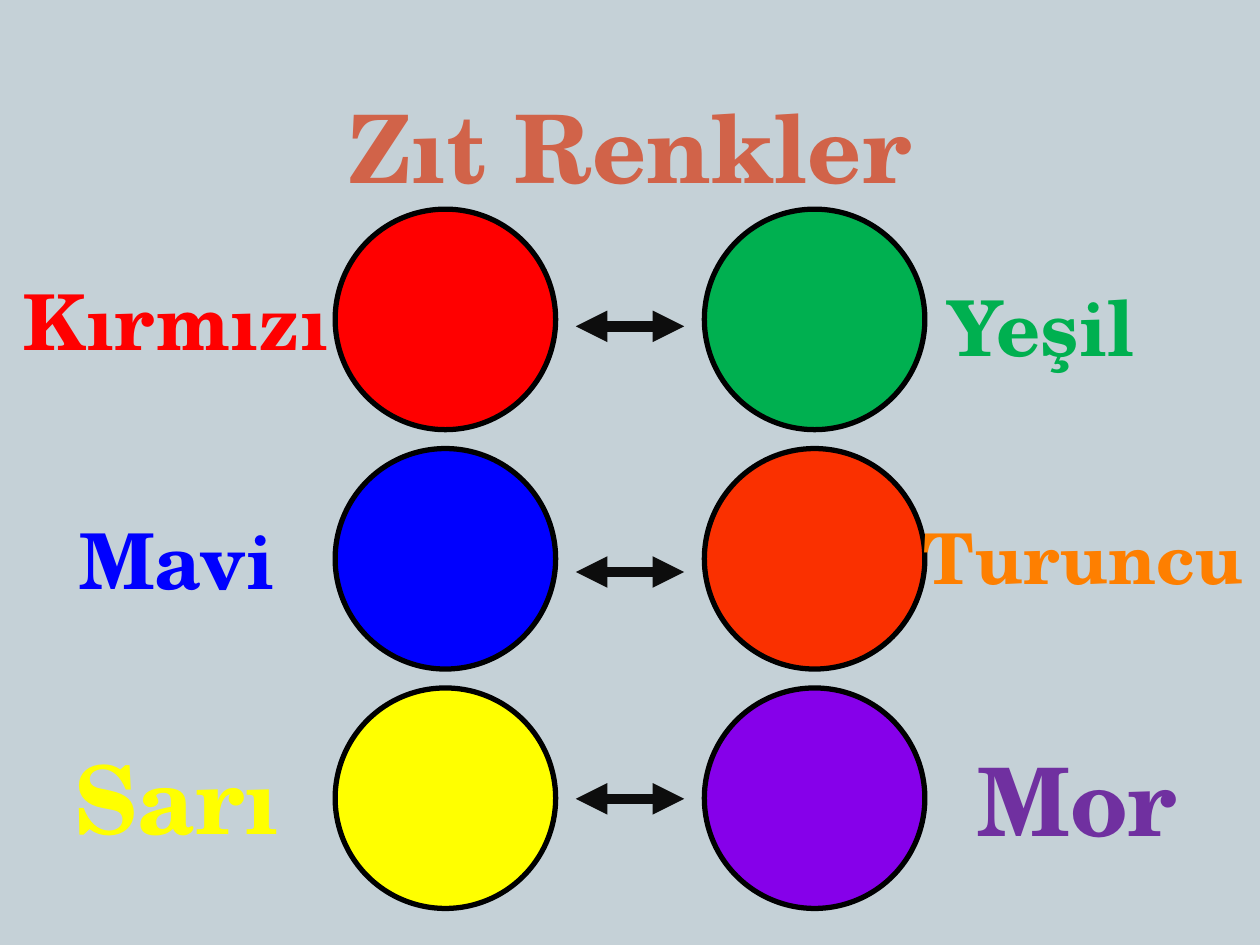
from dataclasses import dataclass

from lxml.etree import SubElement
from pptx import Presentation
from pptx.dml.color import RGBColor
from pptx.enum.shapes import MSO_CONNECTOR, MSO_SHAPE
from pptx.enum.text import MSO_ANCHOR, PP_ALIGN
from pptx.oxml.ns import qn
from pptx.slide import Slide
from pptx.util import Inches, Pt

WIDTH, HEIGHT = 10, 7.5
FONT = "TeX Gyre Schola"
DIAMETER = 1.75
LEFT_COLUMN, RIGHT_COLUMN = 2.66, 5.59
FIRST_ROW, ROW_STEP = 1.66, 1.9
ARROW_START, ARROW_END = 0.457 * WIDTH, 0.543 * WIDTH


@dataclass
class Label:
    text: str
    left: float
    top: float
    width: float
    height: float
    size: int
    color: str
    align: PP_ALIGN = PP_ALIGN.CENTER
    anchor: MSO_ANCHOR = MSO_ANCHOR.MIDDLE


@dataclass
class OppositePair:
    left_fill: str
    right_fill: str
    left_label: Label
    right_label: Label
    arrow_height: float


TITLE = Label("Zıt Renkler", 0.75, -0.07, 8.5, 1.73, 54, "D16349", anchor=MSO_ANCHOR.BOTTOM)
PAIRS = [
    OppositePair(
        "FF0000", "00B050",
        Label("Kırmızı", 0, 2.15, 2.8, 0.77, 44, "FF0000"),
        Label("Yeşil", 7.42, 2.2, 1.75, 0.77, 44, "00B050", PP_ALIGN.LEFT),
        2.59,
    ),
    OppositePair(
        "0000FF", "FA3000",
        Label("Mavi", 0.47, 4.06, 1.87, 0.75, 44, "0000FF"),
        Label("Turuncu", 7.2, 4.06, 2.8, 0.72, 40, "FE7F00"),
        4.54,
    ),
    OppositePair(
        "FFFF00", "8600EA",
        Label("Sarı", 0.47, 5.95, 1.87, 0.75, 54, "FFFF00"),
        Label("Mor", 7.66, 5.98, 1.89, 0.72, 54, "7030A0", PP_ALIGN.LEFT),
        6.34,
    ),
]


def paint(color_format, color: str) -> None:
    color_format.rgb = RGBColor.from_string(color)


def add_label(page: Slide, label: Label) -> None:
    lengths = (label.left, label.top, label.width, label.height)
    box = page.shapes.add_textbox(*map(Inches, lengths))
    frame = box.text_frame
    frame.word_wrap = True
    frame.vertical_anchor = label.anchor
    frame.text = label.text
    para = frame.paragraphs[0]
    para.alignment = label.align
    font = para.runs[0].font
    font.name, font.size, font.bold = FONT, Pt(label.size), True
    paint(font.color, label.color)


def add_circle(page: Slide, left: float, top: float, color: str) -> None:
    lengths = (left, top, DIAMETER, DIAMETER)
    circle = page.shapes.add_shape(MSO_SHAPE.OVAL, *map(Inches, lengths))
    circle.shadow.inherit = False
    circle.fill.solid()
    paint(circle.fill.fore_color, color)
    circle.line.width = Pt(3)
    paint(circle.line.color, "000000")


def add_double_arrow(page: Slide, height: float) -> None:
    ends = (ARROW_START, height, ARROW_END, height)
    arrow = page.shapes.add_connector(MSO_CONNECTOR.STRAIGHT, *map(Inches, ends))
    arrow.line.width = Pt(6)
    paint(arrow.line.color, "0D0D0D")
    outline = arrow.line._get_or_add_ln()
    for end in ("a:headEnd", "a:tailEnd"):
        SubElement(outline, qn(end), type="triangle")
    SubElement(arrow._element.spPr, qn("a:effectLst"))


def main() -> None:
    deck = Presentation()
    deck.slide_width, deck.slide_height = Inches(WIDTH), Inches(HEIGHT)
    page = deck.slides.add_slide(deck.slide_layouts[6])
    page.background.fill.solid()
    paint(page.background.fill.fore_color, "C5D1D7")
    add_label(page, TITLE)
    for row, pair in enumerate(PAIRS):
        top = FIRST_ROW + row * ROW_STEP
        add_circle(page, LEFT_COLUMN, top, pair.left_fill)
        add_circle(page, RIGHT_COLUMN, top, pair.right_fill)
        add_label(page, pair.left_label)
        add_label(page, pair.right_label)
        add_double_arrow(page, pair.arrow_height)
    deck.save("out.pptx")


if __name__ == "__main__":
    main()
